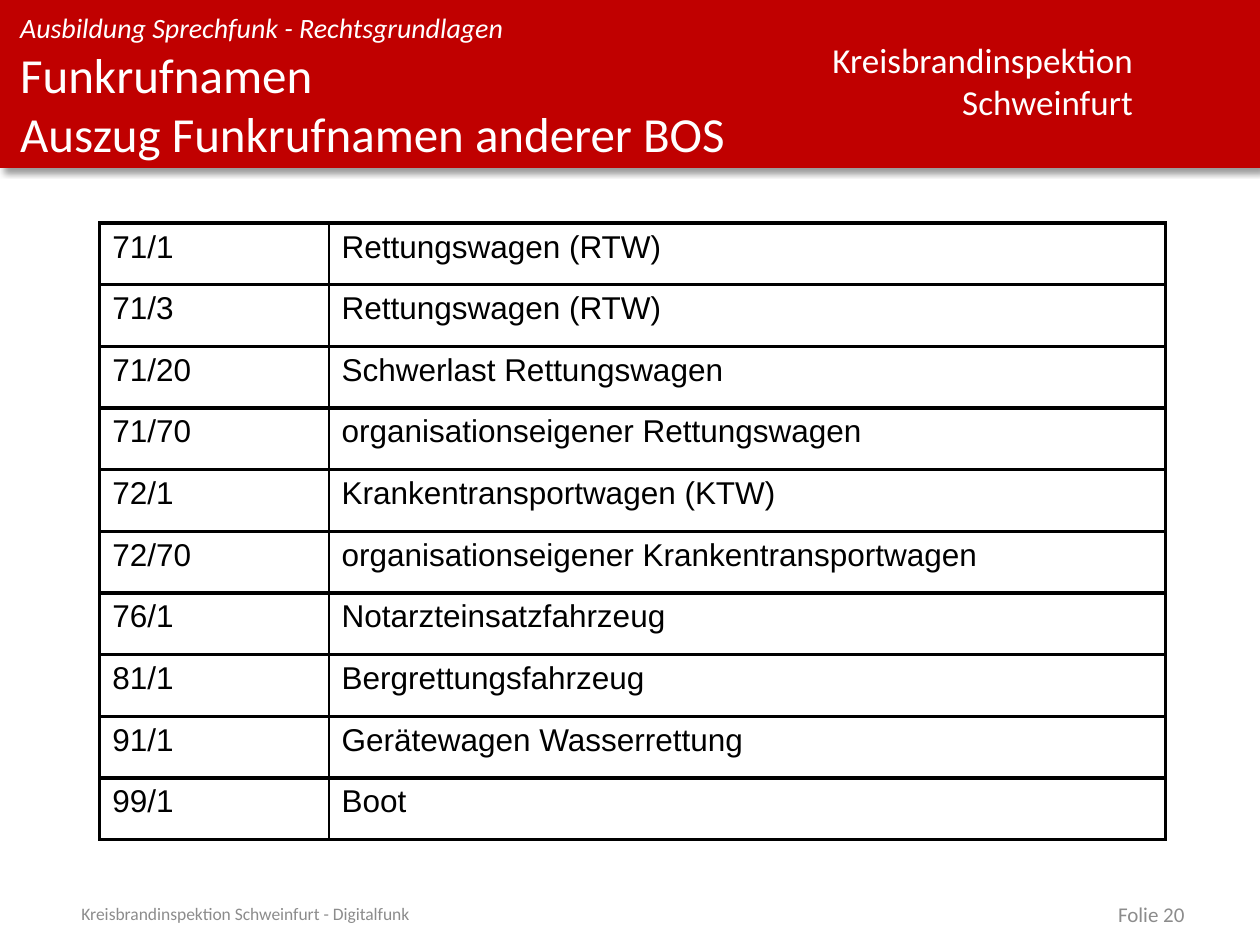
"""Build the slide with radio call signs of other emergency services."""
from pptx import Presentation
from pptx.dml.color import RGBColor as RGB
from pptx.enum.shapes import MSO_SHAPE as SHAPE
from pptx.enum.text import MSO_ANCHOR as ANCHOR, MSO_AUTO_SIZE as AUTO, PP_ALIGN as ALIGN
from pptx.oxml import parse_xml
from pptx.oxml.ns import nsdecls
from pptx.util import Pt

COLORS = {"red": "C00000", "white": "FFFFFF", "grey": "8C8C8C", "black": "000000"}
CALL_SIGNS = [
    ("71/1", "Rettungswagen (RTW)"),
    ("71/3", "Rettungswagen (RTW)"),
    ("71/20", "Schwerlast Rettungswagen"),
    ("71/70", "organisationseigener Rettungswagen"),
    ("72/1", "Krankentransportwagen (KTW)"),
    ("72/70", "organisationseigener Krankentransportwagen"),
    ("76/1", "Notarzteinsatzfahrzeug"),
    ("81/1", "Bergrettungsfahrzeug"),
    ("91/1", "Gerätewagen Wasserrettung"),
    ("99/1", "Boot"),
]


class Deck:
    """Hold the style and the current slide."""

    def __init__(self, width, height):
        self.prs = Presentation()
        self.prs.slide_width, self.prs.slide_height = Pt(width), Pt(height)
        self.slide = self.prs.slides.add_slide(self.prs.slide_layouts[5])
        self.shapes = self.slide.shapes

    def run(self, p, text, size, color, font="Calibri", italic=False):
        r = p.add_run()
        r.text = text
        r.font.name, r.font.size, r.font.italic = font, Pt(size), italic
        r.font.color.rgb = RGB.from_string(COLORS[color])

    def frame(self, tf, anchor=ANCHOR.TOP, inset=None, wrap=True):
        tf.word_wrap, tf.auto_size, tf.vertical_anchor = wrap, AUTO.NONE, anchor
        if inset is not None:
            tf.margin_left = tf.margin_right = tf.margin_top = tf.margin_bottom = Pt(inset)

    def band(self, x, y, w, h, color):
        sp = self.shapes.add_shape(SHAPE.RECTANGLE, Pt(x), Pt(y), Pt(w), Pt(h))
        sp.fill.solid()
        sp.fill.fore_color.rgb = RGB.from_string(COLORS[color])
        sp.line.fill.background()
        sp._element.spPr.append(parse_xml(
            f'<a:effectLst {nsdecls("a")}><a:outerShdw blurRad="{Pt(4)}" dist="{Pt(3)}" '
            f'dir="2700000" algn="tl" rotWithShape="0"><a:srgbClr val="{COLORS["black"]}">'
            '<a:alpha val="40000"/></a:srgbClr></a:outerShdw></a:effectLst>'))
        self.shapes._spTree.insert(2, sp._element)

    def title(self, x, y, w, h, lines, size, color):
        sp = self.shapes.title
        sp.left, sp.top, sp.width, sp.height = Pt(x), Pt(y), Pt(w), Pt(h)
        self.frame(sp.text_frame, inset=0)
        p = sp.text_frame.paragraphs[0]
        p.alignment = ALIGN.LEFT
        for i, line in enumerate(lines):
            if i:
                p.add_line_break()
            self.run(p, line, size, color)

    def text(self, x, y, w, h, lines, size, color, align=ALIGN.LEFT, italic=False, **layout):
        tf = self.shapes.add_textbox(Pt(x), Pt(y), Pt(w), Pt(h)).text_frame
        self.frame(tf, **layout)
        for i, line in enumerate(lines):
            p = tf.add_paragraph() if i else tf.paragraphs[0]
            p.alignment = align
            self.run(p, line, size, color, italic=italic)

    def borders(self, cell, **widths):
        tcPr = cell._tc.get_or_add_tcPr()
        for side in "LRTB":
            tcPr.append(parse_xml(
                f'<a:ln{side} {nsdecls("a")} w="{Pt(widths.get(side, 2.25))}"><a:solidFill>'
                f'<a:srgbClr val="{COLORS["black"]}"/></a:solidFill></a:ln{side}>'))

    def table(self, x, y, widths, height, rows, size):
        table = self.shapes.add_table(len(rows), len(widths), Pt(x), Pt(y),
                                      Pt(sum(widths)), Pt(height)).table
        table.first_row = table.horz_banding = False
        for column, width in zip(table.columns, widths):
            column.width = Pt(width)
        for i, row in enumerate(rows):
            for j, text in enumerate(row):
                cell = table.cell(i, j)
                self.borders(cell, **({"L": 1} if j else {"R": 1}))
                cell.fill.background()
                self.run(cell.text_frame.paragraphs[0], text, size, "black", "Arial")


def main():
    deck = Deck(720, 540)
    deck.band(0, 0, 720, 96, "red")
    deck.text(466.5, 18.5, 188, 55.5, ["Kreisbrandinspektion", "Schweinfurt"], 20, "white",
              ALIGN.RIGHT, wrap=False)
    deck.text(11.5, 6, 455, 19.5, ["Ausbildung Sprechfunk - Rechtsgrundlagen"], 16, "white",
              italic=True, inset=0)
    deck.title(11.5, 25.5, 455, 71, ["Funkrufnamen", "Auszug Funkrufnamen anderer BOS"],
               28, "white")
    deck.text(39.5, 515, 435, 14.5, ["Kreisbrandinspektion Schweinfurt - Digitalfunk"],
              10, "grey", anchor=ANCHOR.MIDDLE)
    deck.text(516, 515, 168, 14.5, ["Folie 20"], 12, "grey", ALIGN.RIGHT,
              anchor=ANCHOR.MIDDLE)
    deck.table(57, 127.5, [131, 478], 352.5, CALL_SIGNS, 18)
    deck.prs.save("out.pptx")


if __name__ == "__main__":
    main()
